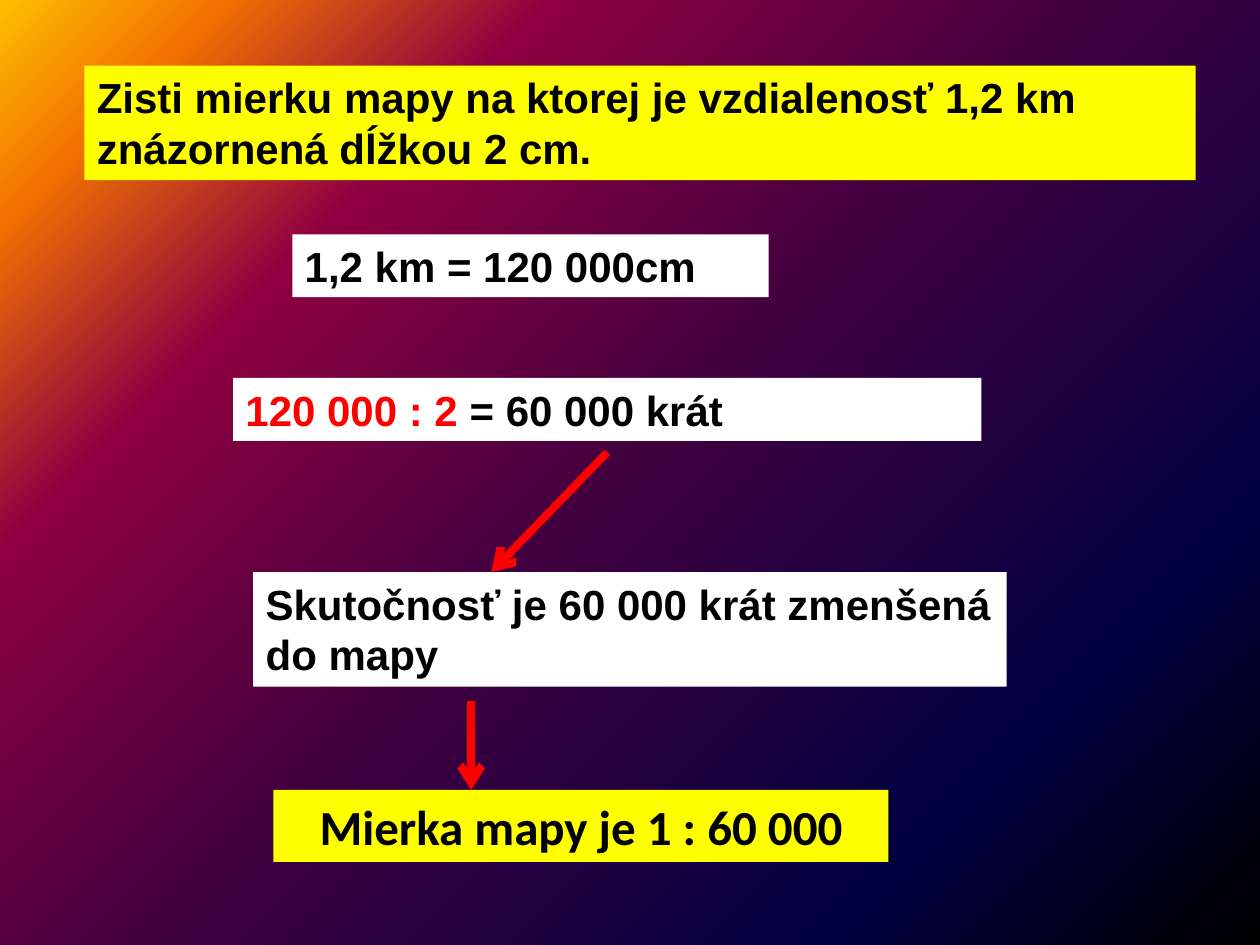
import pptx
import pptx.dml.color
import pptx.enum.shapes
import pptx.enum.text
import pptx.oxml
import pptx.oxml.ns
import pptx.util
from pptx.util import Inches

COLORS = {
    "black": "000000",
    "white": "FFFFFF",
    "yellow": "FFFF00",
    "red": "FF0000",
}
BACKGROUND_STOPS = [
    (0, "000000"), (20, "000040"), (50, "400040"),
    (75, "8F0040"), (90, "F27300"), (100, "FFBF00"),
]
HEADLINE_FORMAT = {"fill": "yellow"}
ANSWER_FORMAT = {"fill": "yellow", "font": "Calibri", "size": 28, "align": "CENTER"}
BOXES = [
    ((0.67, 0.52, 8.82, 0.91),
     [("Zisti mierku mapy na ktorej je vzdialenosť 1,2 km znázornená dĺžkou 2 cm.", "black")],
     HEADLINE_FORMAT),
    ((2.32, 1.86, 3.78, 0.5), [("1,2 km = 120 000cm", "black")], {}),
    ((1.85, 3, 5.94, 0.5), [("120 000 : 2 ", "red"), ("= 60 000 krát", "black")], {}),
    ((2.01, 4.54, 5.98, 0.91),
     [("Skutočnosť je 60 000 krát zmenšená do mapy", "black")], {}),
    ((2.17, 6.27, 4.88, 0.57), [("Mierka mapy je 1 : 60 000", "black")], ANSWER_FORMAT),
]
ARROWS = [(4.82, 3.59, 3.9, 4.54), (3.74, 5.56, 3.74, 6.27)]


def color(name):
    return pptx.dml.color.RGBColor.from_string(COLORS[name])


def paint_background(page):
    stops = "".join(
        f'<a:gs pos="{percent * 1000}"><a:srgbClr val="{value}"/></a:gs>'
        for percent, value in BACKGROUND_STOPS
    )
    background = pptx.oxml.parse_xml(
        f'<p:bg {pptx.oxml.ns.nsdecls("p", "a")}><p:bgPr>'
        f'<a:gradFill rotWithShape="1"><a:gsLst>{stops}</a:gsLst>'
        '<a:path path="circle"><a:fillToRect l="100000" t="100000"/></a:path>'
        "</a:gradFill><a:effectLst/></p:bgPr></p:bg>"
    )
    page.element.cSld.insert(0, background)


def add_text(page, place, runs, fill="white", font="Arial", size=24, align="LEFT"):
    box = page.shapes.add_textbox(*map(Inches, place))
    box.fill.solid()
    box.fill.fore_color.rgb = color(fill)
    frame = box.text_frame
    frame.word_wrap = True
    frame.auto_size = pptx.enum.text.MSO_AUTO_SIZE.SHAPE_TO_FIT_TEXT
    para = frame.paragraphs[0]
    para.alignment = pptx.enum.text.PP_ALIGN[align]
    for text, ink in runs:
        span = para.add_run()
        span.text = text
        span.font.name = font
        span.font.size = pptx.util.Pt(size)
        span.font.bold = True
        span.font.color.rgb = color(ink)


def add_arrow(page, ends):
    arrow = page.shapes.add_connector(
        pptx.enum.shapes.MSO_CONNECTOR.STRAIGHT, *map(Inches, ends)
    )
    arrow.line.color.rgb = color("red")
    arrow.line.width = pptx.util.Pt(4.5)
    namespace = pptx.oxml.ns.nsdecls("a")
    arrow.line._get_or_add_ln().append(
        pptx.oxml.parse_xml(f'<a:tailEnd {namespace} type="arrow"/>')
    )
    arrow.element.spPr.append(pptx.oxml.parse_xml(f"<a:effectLst {namespace}/>"))


def main():
    deck = pptx.Presentation()
    deck.slide_width = Inches(10)
    deck.slide_height = Inches(7.5)
    page = deck.slides.add_slide(deck.slide_layouts[6])
    paint_background(page)
    for place, runs, style in BOXES:
        add_text(page, place, runs, **style)
    for ends in ARROWS:
        add_arrow(page, ends)
    deck.save("out.pptx")


if __name__ == "__main__":
    main()
